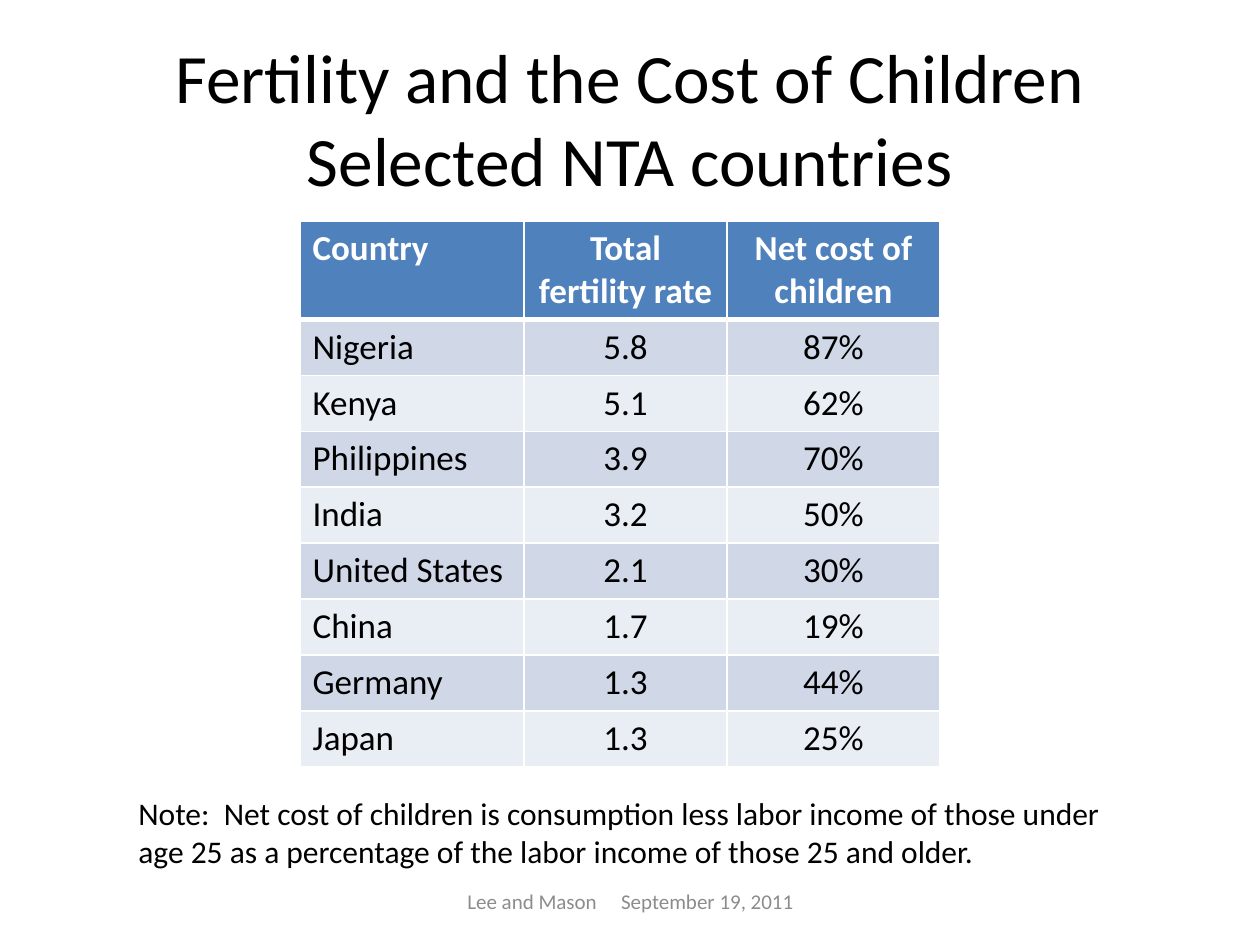
from lxml import etree
from pptx import Presentation
from pptx.dml.color import RGBColor
from pptx.enum.text import MSO_ANCHOR, MSO_AUTO_SIZE, PP_ALIGN
from pptx.oxml.ns import qn
from pptx.util import Emu, Pt

LEFT, CENTER = PP_ALIGN.LEFT, PP_ALIGN.CENTER
TOP, MIDDLE = MSO_ANCHOR.TOP, MSO_ANCHOR.MIDDLE
NO_FIT = MSO_AUTO_SIZE.NONE

FONT = "Calibri"
BLACK, WHITE, GRAY = "000000", "FFFFFF", "8C8C8C"
HEAD, BANDS = "4F81BD", ("D0D8E8", "E9EDF4")

ROWS = [
    ("Country", "Total fertility rate", "Net cost of children"),
    ("Nigeria", "5.8", "87%"),
    ("Kenya", "5.1", "62%"),
    ("Philippines", "3.9", "70%"),
    ("India", "3.2", "50%"),
    ("United States", "2.1", "30%"),
    ("China", "1.7", "19%"),
    ("Germany", "1.3", "44%"),
    ("Japan", "1.3", "25%"),
]


def px(count):
    return Emu(round(count * 914400 / 126))


def color(code):
    return RGBColor.from_string(code)


class Page:
    def __init__(self, deck):
        self.font = FONT
        self.slide = deck.slides.add_slide(deck.slide_layouts[5])

    def run(self, para, text, size, tone, bold=False):
        run = para.add_run()
        run.text = text
        run.font.name = self.font
        run.font.size = Pt(size)
        run.font.bold = bold
        run.font.color.rgb = color(tone)
        return run

    def title(self, box, lines, size):
        shape = self.slide.shapes.title
        shape.left, shape.top, shape.width, shape.height = map(px, box)
        frame = shape.text_frame
        frame.auto_size = NO_FIT
        frame.vertical_anchor = MIDDLE
        para = frame.paragraphs[0]
        para.alignment = CENTER
        for index, line in enumerate(lines):
            if index:
                para.add_line_break()
            self.run(para, line, size, BLACK)

    def text(self, box, parts, size, tone, align=LEFT, anchor=TOP, gap=0):
        frame = self.slide.shapes.add_textbox(*map(px, box)).text_frame
        frame.word_wrap = True
        frame.vertical_anchor = anchor
        para = frame.paragraphs[0]
        para.alignment = align
        for index, part in enumerate(parts):
            if index:
                space = self.run(para, " ", size, tone)
                space.font._element.set("spc", str(gap * 100))
            self.run(para, part, size, tone)

    def edge(self, cell, side, width):
        props = cell._tc.get_or_add_tcPr()
        line = etree.SubElement(props, qn(f"a:{side}"), w=str(Pt(width)))
        fill = etree.SubElement(line, qn("a:solidFill"))
        etree.SubElement(fill, qn("a:srgbClr"), val=WHITE)

    def cell(self, cell, text, row, col):
        head = row == 0
        for side in ("lnL", "lnR", "lnT", "lnB"):
            thick = (head and side == "lnB") or (row == 1 and side == "lnT")
            self.edge(cell, side, 3 if thick else 1)
        cell.fill.solid()
        cell.fill.fore_color.rgb = color(HEAD if head else BANDS[(row - 1) % 2])
        para = cell.text_frame.paragraphs[0]
        para.alignment = CENTER if col else LEFT
        self.run(para, text, 20, WHITE if head else BLACK, head)

    def table(self, left, top, widths, heights, rows):
        box = (left, top, sum(widths), sum(heights))
        frame = self.slide.shapes.add_table(len(rows), len(widths), *map(px, box))
        grid = frame.table
        for col, width in zip(grid.columns, widths):
            col.width = px(width)
        for row, height in zip(grid.rows, heights):
            row.height = px(height)
        for r, values in enumerate(rows):
            for c, value in enumerate(values):
                self.cell(grid.cell(r, c), value, r, c)


def main():
    deck = Presentation()
    deck.slide_width, deck.slide_height = px(1260), px(945)
    page = Page(deck)
    page.title(
        (63, 38, 1134, 158),
        ["Fertility and the Cost of Children", "Selected NTA countries"],
        39.6,
    )
    page.table(300, 221, (224, 203, 213), [97] + [56] * (len(ROWS) - 1), ROWS)
    page.text(
        (431, 876, 399, 50),
        ["Lee and Mason", "September 19, 2011"],
        12, GRAY, CENTER, MIDDLE, 11,
    )
    note = (
        "Note:  Net cost of children is consumption less labor income of those "
        "under age 25 as a percentage of the labor income of those 25 and older."
    )
    page.text((126, 788, 987, 127), [note], 18, BLACK)
    deck.save("out.pptx")


if __name__ == "__main__":
    main()
